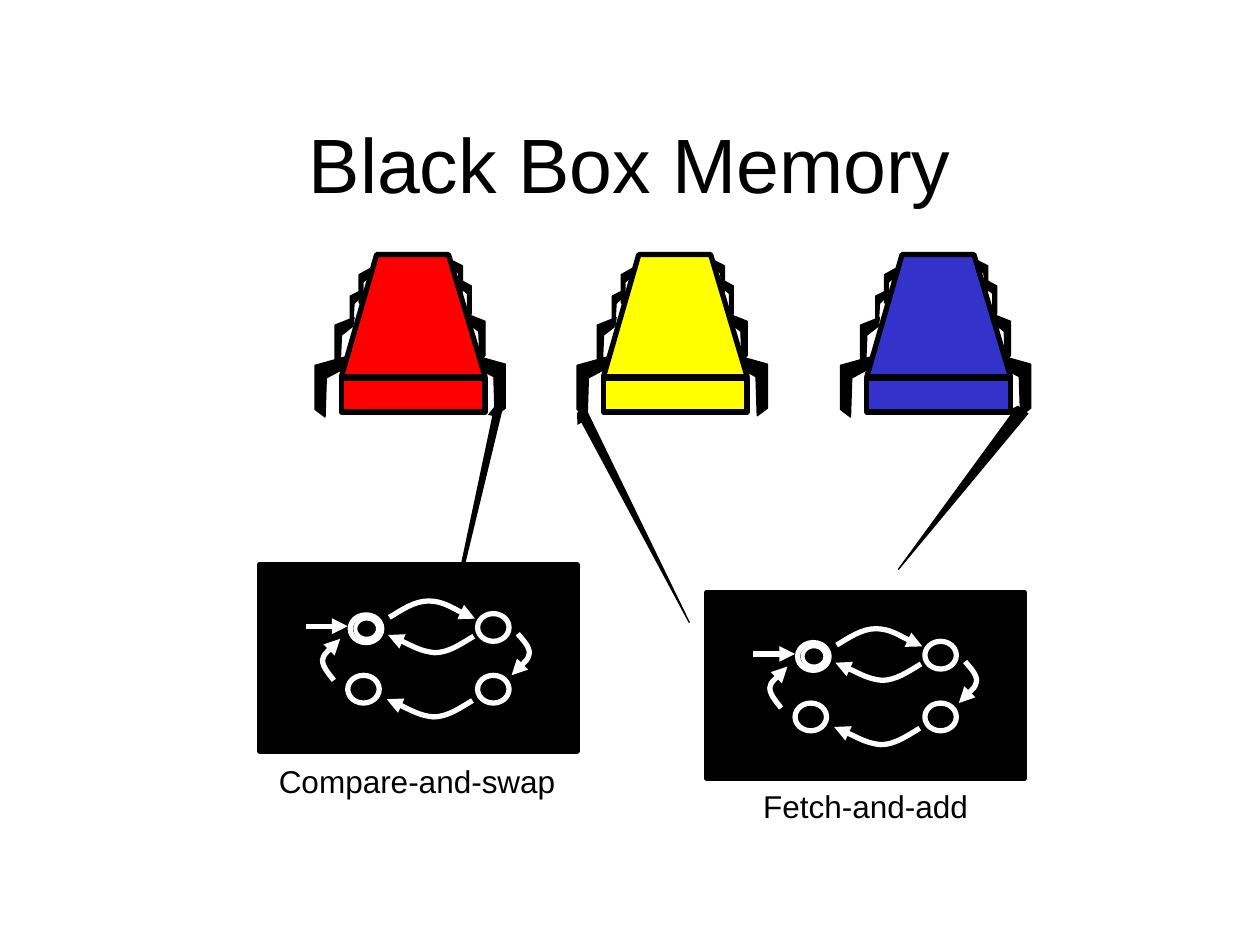
from lxml.etree import SubElement
from pptx import Presentation
from pptx.dml.color import RGBColor
from pptx.enum.shapes import MSO_CONNECTOR, MSO_SHAPE
from pptx.enum.text import MSO_ANCHOR, MSO_AUTO_SIZE, PP_ALIGN
from pptx.oxml.ns import qn
from pptx.util import Inches, Pt

BLACK = RGBColor(0x00, 0x00, 0x00)
WHITE = RGBColor(0xFF, 0xFF, 0xFF)
RED = RGBColor(0xFF, 0x00, 0x00)
YELLOW = RGBColor(0xFF, 0xFF, 0x00)
BLUE = RGBColor(0x33, 0x33, 0xCC)

# Leg outlines, measured from the joint with the body
FRONT_LEG = [(0, 0), (0.25, 0.07), (0.25, 0.42), (0.17, 0.48), (0.16, 0.17), (0.01, 0.09)]
SECOND_LEG = [(0, 0), (0.15, 0.06), (0.15, 0.33), (0.11, 0.38), (0.1, 0.14), (0.01, 0.07)]
THIRD_LEG = [(0, 0), (0.09, 0.05), (0.09, 0.27), (0.06, 0.31), (0.06, 0.11), (0, 0.06)]
REAR_LEG = [(0, 0), (0.08, 0.04), (0.08, 0.24), (0.06, 0.27), (0.05, 0.1), (0, 0.05)]

# Outline, joint, and side (1 right, -1 left), relative to the body's top left
LEGS = [
    (FRONT_LEG, 1.05, 0.8, 1),
    (SECOND_LEG, 0.99, 0.47, 1),
    (THIRD_LEG, 0.94, 0.2, 1),
    (REAR_LEG, 0.88, 0.05, 1),
    (FRONT_LEG, 0.04, 0.81, -1),
    (SECOND_LEG, 0.1, 0.5, -1),
    (THIRD_LEG, 0.23, 0.11, -1),
    (REAR_LEG, 0.15, 0.29, -1),
]

# State machine, relative to its black box
STATES = [(0.72, 0.4), (1.73, 0.39), (0.7, 0.88), (1.73, 0.88)]
LEFTWARD_ARC = [(0.68, 0.01), (0.58, 0.07), (0.48, 0.14), (0.37, 0.14),
                (0.26, 0.13), (0.08, 0.03), (0, 0)]
TRANSITIONS = [
    [(1.03, 0.42), (1.13, 0.36), (1.23, 0.29), (1.34, 0.29),
     (1.45, 0.29), (1.63, 0.4), (1.71, 0.43)],
    [(x + 1.02, y + 0.56) for x, y in LEFTWARD_ARC],
    [(x + 1.01, y + 1.07) for x, y in LEFTWARD_ARC],
    [(2.05, 0.55), (2.07, 0.58), (2.15, 0.65), (2.14, 0.71),
     (2.13, 0.76), (2.03, 0.85), (2, 0.88)],
    [(0.59, 0.92), (0.57, 0.89), (0.5, 0.82), (0.5, 0.76),
     (0.51, 0.71), (0.61, 0.62), (0.64, 0.59)],
]


class SlideBuilder:
    """Draws on one slide; shapes go to the slide or to the group last begun."""

    font_name = "Arial"

    def __init__(self, slide):
        self.slide = slide
        self.shapes = slide.shapes

    def begin_group(self):
        self.shapes = self.slide.shapes.add_group_shape().shapes

    def end_group(self):
        self.shapes = self.slide.shapes

    def paint(self, shape, fill, line, width):
        shape.shadow.inherit = False
        if fill is None:
            shape.fill.background()
        else:
            shape.fill.solid()
            shape.fill.fore_color.rgb = fill
        shape.line.color.rgb = line
        shape.line.width = Pt(width)

    def add_arrowhead(self, shape):
        line = shape.element.spPr.find(qn("a:ln"))
        SubElement(line, qn("a:tailEnd"), type="triangle")

    def preset(self, kind, left, top, width, height, fill, line, weight=3):
        shape = self.shapes.add_shape(
            kind, Inches(left), Inches(top), Inches(width), Inches(height))
        self.paint(shape, fill, line, weight)

    def outline(self, points, fill, line=BLACK, width=0.75, close=True):
        start, *rest = [(Inches(x), Inches(y)) for x, y in points]
        builder = self.shapes.build_freeform(*start)
        builder.add_line_segments(rest, close=close)
        shape = builder.convert_to_shape()
        self.paint(shape, fill, line, width)
        return shape

    def curved_arrow(self, points):
        """Draws a Bezier path: a start, then three points for each curve."""
        shape = self.outline(points, None, WHITE, 3, close=False)
        path_element = next(shape.element.iter(qn("a:path")))
        segments = path_element.findall(qn("a:lnTo"))
        for first in range(0, len(segments), 3):
            curve = SubElement(path_element, qn("a:cubicBezTo"))
            for segment in segments[first:first + 3]:
                curve.append(segment[0])
                path_element.remove(segment)
        self.add_arrowhead(shape)

    def straight_arrow(self, start_x, start_y, end_x, end_y):
        connector = self.shapes.add_connector(
            MSO_CONNECTOR.STRAIGHT, Inches(start_x), Inches(start_y),
            Inches(end_x), Inches(end_y))
        connector.line.color.rgb = WHITE
        connector.line.width = Pt(3)
        self.add_arrowhead(connector)
        SubElement(connector.element.spPr, qn("a:effectLst"))

    def set_text(self, shape, text, size):
        shape.text_frame.text = text
        paragraph = shape.text_frame.paragraphs[0]
        paragraph.alignment = PP_ALIGN.CENTER
        paragraph.font.name = self.font_name
        paragraph.font.size = Pt(size)
        paragraph.font.color.rgb = BLACK

    def title(self, text):
        title = self.slide.shapes.title
        title.left, title.top = Inches(0.75), Inches(0.67)
        title.width, title.height = Inches(8.5), Inches(1.25)
        title.text_frame.vertical_anchor = MSO_ANCHOR.MIDDLE
        self.set_text(title, text, 44)

    def caption(self, text, left, top, width):
        box = self.shapes.add_textbox(
            Inches(left), Inches(top), Inches(width), Inches(0.4))
        box.text_frame.word_wrap = False
        box.text_frame.auto_size = MSO_AUTO_SIZE.SHAPE_TO_FIT_TEXT
        self.set_text(box, text, 18)

    def bug(self, left, top, color):
        self.begin_group()
        for leg, joint_x, joint_y, side in LEGS:
            points = [(left + joint_x + side * x, top + joint_y + y) for x, y in leg]
            self.outline(points, BLACK)
        body = [(0, 0.97), (0.28, 0), (0.85, 0), (1.14, 0.97)]
        self.outline([(left + x, top + y) for x, y in body], color, width=3)
        self.preset(MSO_SHAPE.RECTANGLE, left, top + 0.98, 1.14, 0.27, color, BLACK)
        self.end_group()

    def pointer(self, points):
        self.add_arrowhead(self.outline(points, BLACK, close=False))

    def state_machine(self, left, top):
        self.begin_group()
        self.preset(MSO_SHAPE.RECTANGLE, left, top, 2.52, 1.48, BLACK, BLACK)
        for x, y in STATES:
            self.preset(MSO_SHAPE.OVAL, left + x, top + y, 0.25, 0.22, None, WHITE)
        self.preset(MSO_SHAPE.OVAL, left + 0.76, top + 0.43, 0.18, 0.16, None, WHITE, 2.25)
        for points in TRANSITIONS:
            self.curved_arrow([(left + x, top + y) for x, y in points])
        self.straight_arrow(left + 0.37, top + 0.49, left + 0.7, top + 0.49)
        self.end_group()


def main():
    presentation = Presentation()
    presentation.slide_width = Inches(10)
    presentation.slide_height = Inches(7.5)
    title_only = presentation.slide_layouts[5]
    builder = SlideBuilder(presentation.slides.add_slide(title_only))

    builder.title("Black Box Memory")
    builder.bug(2.71, 2.02, RED)
    builder.pointer([(4.01, 3.14), (3.5, 5.25), (3.93, 3.22)])
    builder.bug(4.79, 2.02, YELLOW)
    builder.bug(6.88, 2.02, BLUE)
    builder.pointer([(4.63, 3.21), (5.47, 4.94), (4.58, 3.28)])
    builder.pointer([(8.16, 3.28), (7.13, 4.52), (8.08, 3.22)])
    builder.state_machine(2.06, 4.48)
    builder.state_machine(5.61, 4.7)
    builder.caption("Compare-and-swap", 2.1, 6, 2.42)
    builder.caption("Fetch-and-add", 5.95, 6.2, 1.84)
    presentation.save("out.pptx")


if __name__ == "__main__":
    main()
